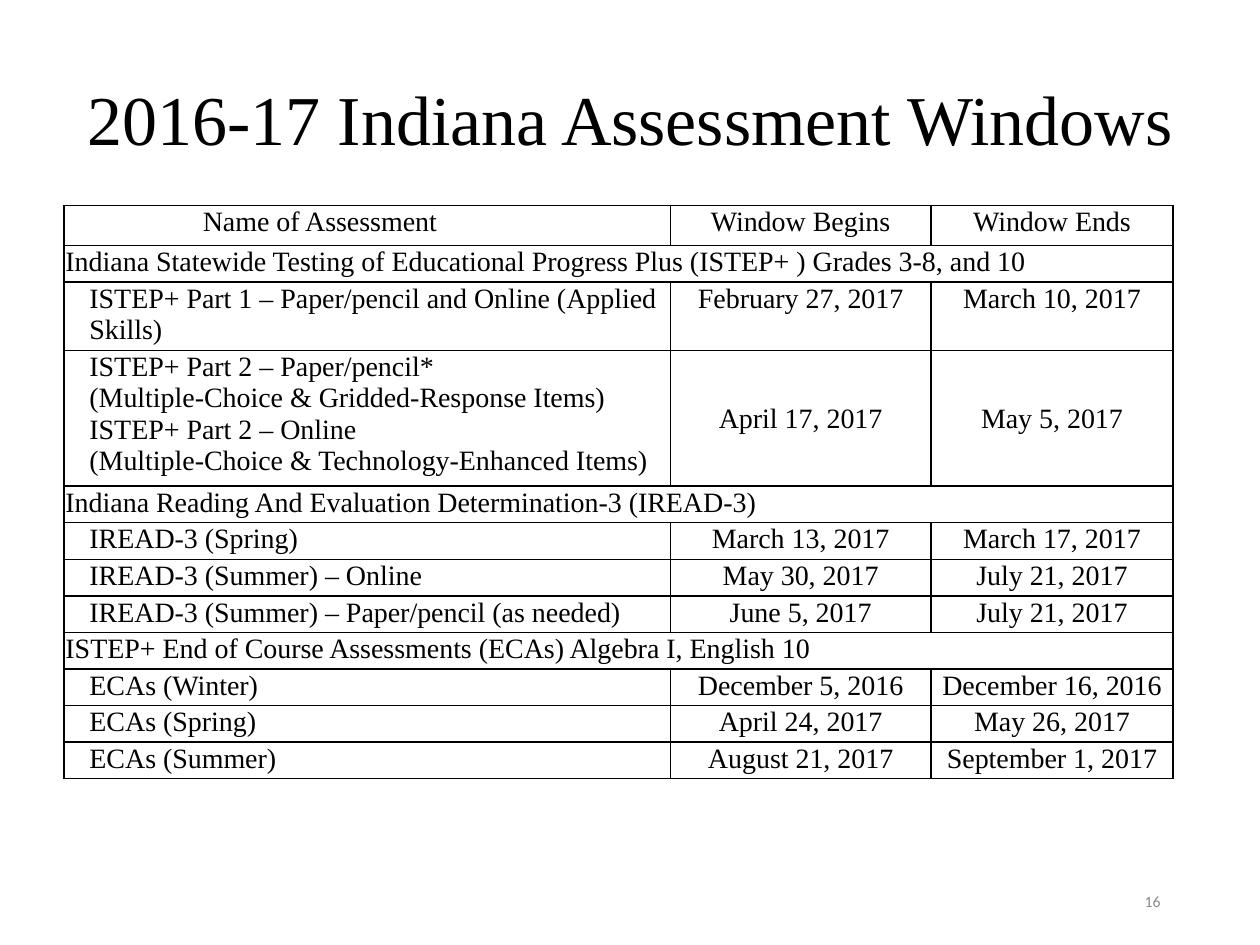
from lxml import etree
from pptx import Presentation
from pptx.dml.color import RGBColor
from pptx.enum.text import MSO_ANCHOR, PP_ALIGN
from pptx.oxml.ns import qn
from pptx.util import Inches, Pt

LEFT, CENTER, RIGHT = PP_ALIGN.LEFT, PP_ALIGN.CENTER, PP_ALIGN.RIGHT
TOP, MIDDLE = MSO_ANCHOR.TOP, MSO_ANCHOR.MIDDLE
BLACK = RGBColor(0x00, 0x00, 0x00)
GRAY = RGBColor(0x8C, 0x8C, 0x8C)
SERIF, SANS = "Times New Roman", "Calibri"

COLS = [4.81, 2.07, 1.92]
ROW = 0.29
TALL = {0: 0.32, 2: 0.43, 3: 0.87}
PAD, INDENT, HEAD = 0.01, 0.2, 1.1

# A row with a single entry is a section heading across all columns
ROWS = [
    ("Name of Assessment", "Window Begins", "Window Ends"),
    ("Indiana Statewide Testing of Educational Progress Plus (ISTEP+ ) "
     "Grades 3-8, and 10",),
    ("ISTEP+ Part 1 – Paper/pencil and Online (Applied Skills)",
     "February 27, 2017", "March 10, 2017"),
    ("ISTEP+ Part 2 – Paper/pencil*\v"
     "(Multiple-Choice & Gridded-Response Items)\v"
     "ISTEP+ Part 2 – Online\v"
     "(Multiple-Choice & Technology-Enhanced Items)",
     "April 17, 2017", "May 5, 2017"),
    ("Indiana Reading And Evaluation Determination-3 (IREAD-3)",),
    ("IREAD-3 (Spring)", "March 13, 2017", "March 17, 2017"),
    ("IREAD-3 (Summer) – Online", "May 30, 2017", "July 21, 2017"),
    ("IREAD-3 (Summer) – Paper/pencil (as needed)",
     "June 5, 2017", "July 21, 2017"),
    ("ISTEP+ End of Course Assessments (ECAs) Algebra I, English 10",),
    ("ECAs (Winter)", "December 5, 2016", "December 16, 2016"),
    ("ECAs (Spring)", "April 24, 2017", "May 26, 2017"),
    ("ECAs (Summer)", "August 21, 2017", "September 1, 2017"),
]


def write(frame, text, size=16, font=SERIF, color=BLACK, align=LEFT,
          spacing=None):
    para = frame.paragraphs[0]
    para.text = text
    para.alignment = align
    para.line_spacing = spacing
    for run in para.runs:
        run.font.size = Pt(size)
        run.font.name = font
        run.font.color.rgb = color


def add_box(slide, text, left, top, width, height, **style):
    box = slide.shapes.add_textbox(Inches(left), Inches(top),
                                   Inches(width), Inches(height))
    frame = box.text_frame
    frame.word_wrap = True
    frame.vertical_anchor = MIDDLE
    write(frame, text, **style)


def add_edges(cell, color=BLACK, width=1):
    props = cell._tc.get_or_add_tcPr()
    for side in ("lnL", "lnR", "lnT", "lnB"):
        line = etree.SubElement(props, qn(f"a:{side}"), w=str(Pt(width)))
        fill = etree.SubElement(line, qn("a:solidFill"))
        etree.SubElement(fill, qn("a:srgbClr"), val=str(color))


def fill_cell(cell, text, indent=PAD, align=LEFT, anchor=TOP):
    cell.margin_left = Inches(indent)
    cell.margin_top = cell.margin_right = Inches(PAD)
    cell.margin_bottom = 0
    cell.vertical_anchor = anchor
    write(cell.text_frame, text, align=align)


def add_grid(slide, left, top):
    highs = [TALL.get(i, ROW) for i in range(len(ROWS))]
    table = slide.shapes.add_table(
        len(ROWS), len(COLS), Inches(left), Inches(top),
        Inches(sum(COLS)), Inches(sum(highs))).table
    table.first_row = table.horz_banding = False
    for col, width in zip(table.columns, COLS):
        col.width = Inches(width)
    for row, high in zip(table.rows, highs):
        row.height = Inches(high)
    for cell in table.iter_cells():
        add_edges(cell)
        cell.fill.background()

    for i, (name, *dates) in enumerate(ROWS):
        first = table.cell(i, 0)
        if not dates:
            first.merge(table.cell(i, len(COLS) - 1))
            fill_cell(first, name)
            continue
        fill_cell(first, name, indent=INDENT if i else HEAD)
        anchor = MIDDLE if "\v" in name else TOP
        for j, date in enumerate(dates, 1):
            fill_cell(table.cell(i, j), date, align=CENTER, anchor=anchor)


def main():
    deck = Presentation()
    deck.slide_width, deck.slide_height = Inches(10), Inches(7.5)
    slide = deck.slides.add_slide(deck.slide_layouts[6])

    # Title
    add_box(slide, "2016-17 Indiana Assessment Windows", 0.51, 0.25, 8.98,
            1.45, size=40, align=CENTER, spacing=0.9)
    # Assessment windows
    add_grid(slide, 0.51, 1.63)
    # Page number
    add_box(slide, "16", 7.06, 6.95, 2.25, 0.4, size=9, font=SANS,
            color=GRAY, align=RIGHT)

    deck.save("out.pptx")


if __name__ == "__main__":
    main()
